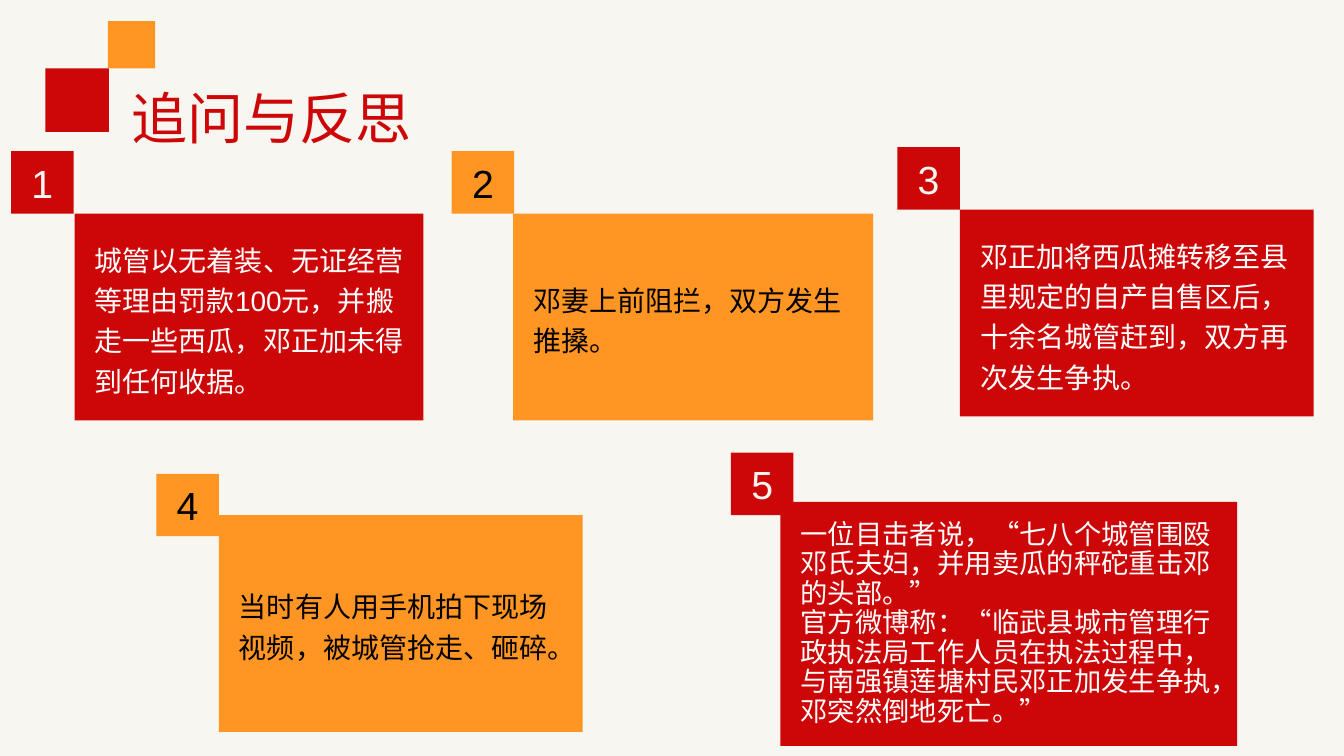
from pptx import Presentation
from pptx.dml.color import RGBColor
from pptx.enum.shapes import MSO_SHAPE
from pptx.enum.text import MSO_ANCHOR, PP_ALIGN
from pptx.util import Inches, Pt

COLORS = {
    "background": "F8F6F1",
    "red": "CD0707",
    "orange": "FF9523",
    "cream": "F7F6F2",
    "white": "FFFFFF",
    "black": "000000",
}
FONT = "Arial"
BADGE_SIZE = 0.62

EVENTS = [
    ("1", (0.11, 1.5), (0.74, 2.12, 3.46, 2.05), "red", 20, 1.2,
     ["城管以无着装、无证经营等理由罚款100元，并搬走一些西瓜，邓正加未得到任何收据。"]),
    ("2", (4.48, 1.5), (5.09, 2.12, 3.57, 2.05), "orange", 20, 1.2,
     ["邓妻上前阻拦，双方发生推搡。"]),
    ("3", (8.9, 1.46), (9.52, 2.08, 3.51, 2.05), "red", 20, 1.2,
     ["邓正加将西瓜摊转移至县里规定的自产自售区后，十余名城管赶到，双方再次发生争执。"]),
    ("4", (1.55, 4.7), (2.17, 5.11, 3.61, 2.15), "orange", 20, 1.2,
     ["当时有人用手机拍下现场视频，被城管抢走、砸碎。"]),
    ("5", (7.25, 4.49), (7.74, 4.98, 4.53, 2.42), "red", 19.5, 0.9,
     ["一位目击者说，“七八个城管围殴邓氏夫妇，并用卖瓜的秤砣重击邓的头部。”",
      "官方微博称：“临武县城市管理行政执法局工作人员在执法过程中，"
      "与南强镇莲塘村民邓正加发生争执，邓突然倒地死亡。”"]),
]


def rgb(color):
    return RGBColor.from_string(COLORS[color])


def write_text(frame, paragraphs, size, color, align=PP_ALIGN.LEFT,
               line_spacing=None, left_inset=0.1):
    frame.word_wrap = True
    frame.vertical_anchor = MSO_ANCHOR.MIDDLE
    frame.margin_left = Inches(left_inset)
    for index, text in enumerate(paragraphs):
        paragraph = frame.add_paragraph() if index else frame.paragraphs[0]
        paragraph.alignment = align
        paragraph.line_spacing = line_spacing
        run = paragraph.add_run()
        run.text = text
        run.font.name = FONT
        run.font.size = Pt(size)
        run.font.color.rgb = rgb(color)


def add_block(slide, bounds, fill):
    block = slide.shapes.add_shape(MSO_SHAPE.RECTANGLE, *map(Inches, bounds))
    block.shadow.inherit = False
    block.fill.solid()
    block.fill.fore_color.rgb = rgb(fill)
    block.line.fill.background()
    return block


def add_title(slide, title):
    heading = slide.shapes.add_textbox(
        Inches(1.21), Inches(0.54), Inches(6.04), Inches(1.25))
    write_text(heading.text_frame, [title], size=40, color="red")


def add_event(slide, number, corner, bounds, fill, size, spacing, paragraphs):
    dark = fill == "red"
    badge = add_block(slide, (*corner, BADGE_SIZE, BADGE_SIZE), fill)
    write_text(badge.text_frame, [number], size=28,
               color="cream" if dark else "black", align=PP_ALIGN.CENTER)
    card = add_block(slide, bounds, fill)
    write_text(card.text_frame, paragraphs, size=size,
               color="white" if dark else "black",
               line_spacing=spacing, left_inset=0.2)


def main():
    presentation = Presentation()
    presentation.slide_width = Inches(13.33)
    presentation.slide_height = Inches(7.5)
    slide = presentation.slides.add_slide(presentation.slide_layouts[6])
    slide.background.fill.solid()
    slide.background.fill.fore_color.rgb = rgb("background")

    add_title(slide, "追问与反思")
    for event in EVENTS:
        add_event(slide, *event)
    add_block(slide, (0.45, 0.68, 0.63, 0.63), "red")
    add_block(slide, (1.07, 0.21, 0.47, 0.47), "orange")

    presentation.save("out.pptx")


if __name__ == "__main__":
    main()
